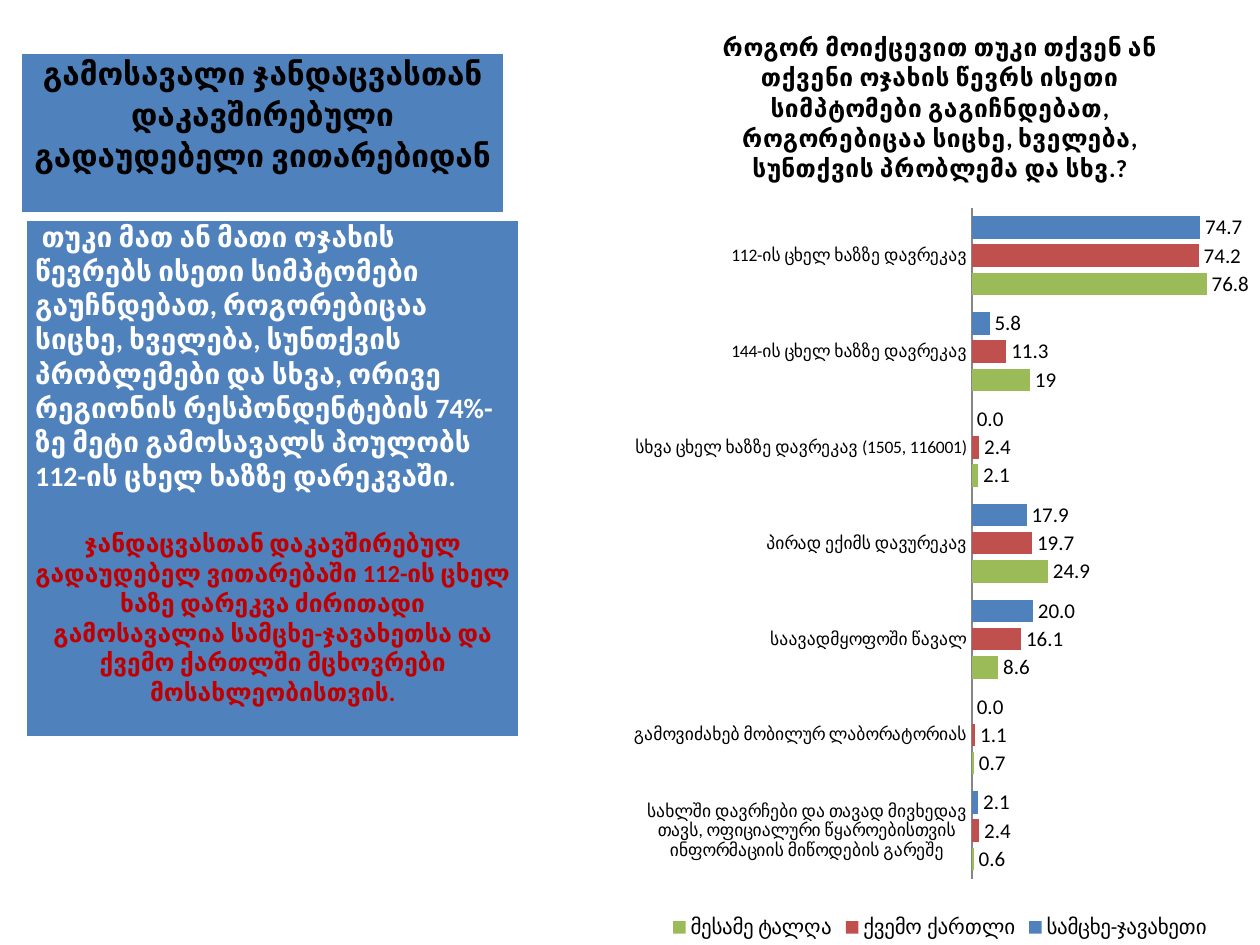
from lxml import etree
from pptx import Presentation
from pptx.chart.data import CategoryChartData
from pptx.dml.color import RGBColor
from pptx.enum.chart import XL_CHART_TYPE, XL_LABEL_POSITION, XL_LEGEND_POSITION, XL_TICK_MARK
from pptx.enum.text import PP_ALIGN
from pptx.oxml import parse_xml
from pptx.oxml.ns import nsdecls, qn
from pptx.util import Inches, Pt

BAR = XL_CHART_TYPE.BAR_CLUSTERED
OUTER = XL_LABEL_POSITION.OUTSIDE_END
BOTTOM = XL_LEGEND_POSITION.BOTTOM
NO_TICK = XL_TICK_MARK.NONE
CENTER = PP_ALIGN.CENTER
LEFT = PP_ALIGN.LEFT
FONT = "Calibri"
COLORS = {"blue": "4F81BD", "red": "C0504D", "green": "9BBB59", "black": "000000",
          "white": "FFFFFF", "dark": "C00000", "grey": "868686"}

HEAD = "გამოსავალი ჯანდაცვასთან დაკავშირებული გადაუდებელი ვითარებიდან"
BODY = ("\u00a0თუკი მათ ან მათი ოჯახის წევრებს ისეთი სიმპტომები გაუჩნდებათ, როგორებიცაა "
        "სიცხე, ხველება, სუნთქვის პრობლემები და სხვა, ორივე რეგიონის რესპონდენტების "
        "74%-ზე მეტი გამოსავალს პოულობს 112-ის ცხელ ხაზზე დარეკვაში.")
NOTE = ("ჯანდაცვასთან დაკავშირებულ გადაუდებელ ვითარებაში 112-ის ცხელ ხაზე დარეკვა "
        "ძირითადი გამოსავალია სამცხე-ჯავახეთსა და ქვემო ქართლში მცხოვრები "
        "მოსახლეობისთვის.")
TITLE = ("როგორ მოიქცევით თუკი თქვენ ან თქვენი ოჯახის წევრს ისეთი სიმპტომები "
         "გაგიჩნდებათ, როგორებიცაა სიცხე, ხველება, სუნთქვის პრობლემა და სხვ.?")
CATS = ["112-ის ცხელ ხაზზე დავრეკავ", "144-ის ცხელ ხაზზე დავრეკავ",
        "სხვა ცხელ ხაზზე დავრეკავ (1505, 116001)", "პირად ექიმს დავურეკავ",
        "საავადმყოფოში წავალ", "გამოვიძახებ მობილურ ლაბორატორიას",
        "სახლში დავრჩები და თავად მივხედავ თავს, ოფიციალური წყაროებისთვის "
        "ინფორმაციის მიწოდების გარეშე"]
SERIES = [
    ("სამცხე-ჯავახეთი", [74.7, 5.8, 0, 17.9, 20, 0, 2.1], "blue", "###0.0"),
    ("ქვემო ქართლი", [74.2, 11.3, 2.4, 19.7, 16.1, 1.1, 2.4], "red", "###0.0"),
    ("მესამე ტალღა", [76.8, 19, 2.1, 24.9, 8.6, 0.7, 0.6], "green", "General"),
]


def rgb(name):
    return RGBColor.from_string(COLORS[name])


def set_font(font, size, color, bold=False):
    font.name = FONT
    font.size = Pt(size)
    font.bold = bold
    font.color.rgb = rgb(color)


def set_edges(cell):
    props = cell._tc.get_or_add_tcPr()
    for spot, (side, width) in enumerate([("L", 1), ("R", 1), ("T", 1), ("B", 3)]):
        line = etree.Element(qn(f"a:ln{side}"), w=str(Pt(width)))
        fill = etree.SubElement(line, qn("a:solidFill"))
        etree.SubElement(fill, qn("a:srgbClr"), val=COLORS["white"])
        props.insert(spot, line)


def add_panel(slide, box, paras):
    table = slide.shapes.add_table(1, 1, *map(Inches, box)).table
    cell = table.cell(0, 0)
    cell.fill.solid()
    cell.fill.fore_color.rgb = rgb("blue")
    cell.margin_left = cell.margin_right = Inches(0.07)
    cell.margin_top = cell.margin_bottom = 0
    set_edges(cell)
    frame = cell.text_frame
    for spot, (text, size, color, align, space, gap) in enumerate(paras):
        para = frame.add_paragraph() if spot else frame.paragraphs[0]
        para.alignment = align
        para.line_spacing = space
        para.space_before = Pt(gap)
        run = para.add_run()
        run.text = text
        set_font(run.font, size, color, True)


def set_plot(chart, x, y, w, h):
    area = chart._chartSpace.chart.plotArea
    for old in area.findall(qn("c:layout")):
        area.remove(old)
    area.insert(0, parse_xml(
        f'<c:layout {nsdecls("c")}><c:manualLayout><c:layoutTarget val="inner"/>'
        '<c:xMode val="edge"/><c:yMode val="edge"/>'
        f'<c:x val="{x}"/><c:y val="{y}"/><c:w val="{w}"/><c:h val="{h}"/>'
        '</c:manualLayout></c:layout>'))


def add_bars(slide, box):
    data = CategoryChartData()
    data.categories = CATS
    for name, vals, _, form in SERIES:
        data.add_series(name, vals, number_format=form)
    chart = slide.shapes.add_chart(BAR, *map(Inches, box), data).chart
    set_font(chart.font, 12, "black")
    chart.has_title = True
    run = chart.chart_title.text_frame.paragraphs[0].add_run()
    run.text = TITLE
    set_font(run.font, 14, "black", True)
    chart.chart_title.include_in_layout = False
    chart.has_legend = True
    chart.legend.position = BOTTOM
    chart.legend.include_in_layout = False
    set_font(chart.legend.font, 12, "black")

    axis = chart.category_axis
    axis.reverse_order = True
    axis.major_tick_mark = axis.minor_tick_mark = NO_TICK
    axis.format.line.color.rgb = rgb("grey")
    set_font(axis.tick_labels.font, 10, "black")
    scale = chart.value_axis
    scale.visible = False
    scale.has_major_gridlines = False
    scale.minimum_scale, scale.maximum_scale = 0, 90

    plot = chart.plots[0]
    plot.gap_width, plot.overlap = 75, -25
    plot.vary_by_categories = False
    for bars, (_, _, color, form) in zip(plot.series, SERIES):
        bars.format.fill.solid()
        bars.format.fill.fore_color.rgb = rgb(color)
        labels = bars.data_labels
        labels.show_value = True
        labels.position = OUTER
        labels.number_format = form
        labels.number_format_is_linked = False
        set_font(labels.font, 12, "black")
    set_plot(chart, 0.55, 0.22, 0.43, 0.71)


def main():
    deck = Presentation()
    deck.slide_width, deck.slide_height = Inches(10), Inches(7.5)
    slide = deck.slides.add_slide(deck.slide_layouts[6])
    add_bars(slide, (4.92, 0, 5.08, 7.5))
    add_panel(slide, (0.17, 0.42, 3.83, 1.28), [(HEAD, 18, "black", CENTER, 1.07, 0)])
    add_panel(slide, (0.21, 1.75, 3.91, 4.11), [
        (BODY, 16, "white", LEFT, 1.0, 0),
        (NOTE, 14, "dark", CENTER, 1.0, 20),
    ])
    deck.save("out.pptx")


if __name__ == "__main__":
    main()
